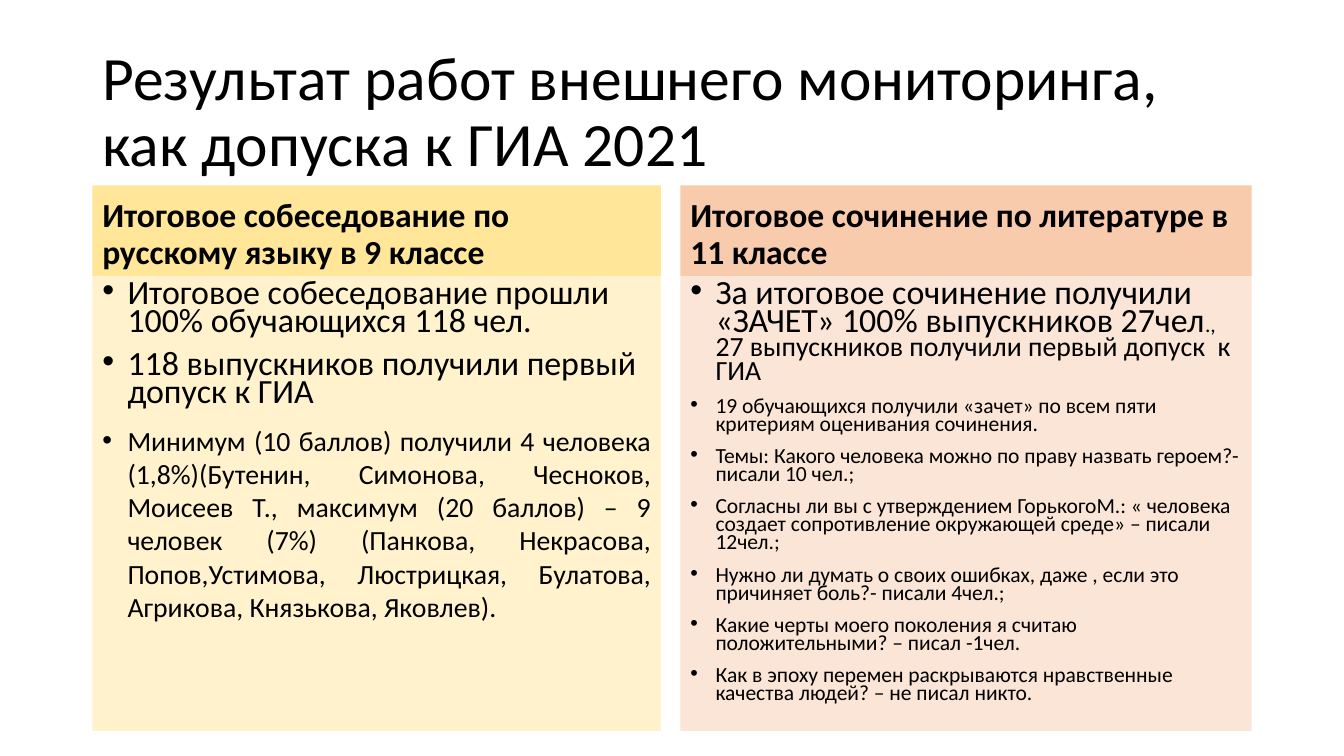
"""Build the slide on external monitoring results as admission to the 2021 state exam."""
import pptx
import pptx.util
import pptx.dml.color
import pptx.enum.shapes
import pptx.enum.text
import lxml.etree

Pt = pptx.util.Pt
RGBColor = pptx.dml.color.RGBColor
ALIGN = pptx.enum.text.PP_ALIGN
ANCHOR = pptx.enum.text.MSO_ANCHOR

BLACK = RGBColor(0x00, 0x00, 0x00)
WHITE = RGBColor(0xFF, 0xFF, 0xFF)
GOLD = RGBColor(0xFF, 0xE6, 0x99)
PALE_GOLD = RGBColor(0xFF, 0xF2, 0xCC)
ORANGE = RGBColor(0xF8, 0xCB, 0xAD)
PALE_ORANGE = RGBColor(0xFB, 0xE5, 0xD6)

LARGE, MEDIUM, SMALL = 24.2, 19.8, 15.4
LEFT = 66
HEADING_TOP, HEADING_HEIGHT = 132.4, 65
BODY_TOP, BODY_HEIGHT = 197.4, 324.6

interview_points = [
    ([("Итоговое собеседование прошли 100% обучающихся 118 чел.", LARGE)], ALIGN.LEFT, 0.7),
    ([("118 выпускников получили первый допуск к ГИА", LARGE)], ALIGN.LEFT, 0.7),
    ([("Минимум (10 баллов) получили 4 человека (1,8%)(Бутенин, Симонова, Чесноков, "
       "Моисеев Т., максимум (20 баллов) – 9 человек (7%) (Панкова, Некрасова, "
       "Попов,Устимова, Люстрицкая, Булатова, Агрикова, Князькова, Яковлев).", MEDIUM)],
     ALIGN.JUSTIFY, 1.0),
]

essay_details = [
    "19 обучающихся получили «зачет» по всем пяти критериям оценивания сочинения.",
    "Темы: Какого человека можно по праву назвать героем?- писали 10 чел.;",
    "Согласны ли вы с утверждением ГорькогоМ.: « человека создает сопротивление "
    "окружающей среде» – писали 12чел.;",
    "Нужно ли думать о своих ошибках, даже , если это причиняет боль?- писали 4чел.;",
    "Какие черты моего поколения я считаю положительными? – писал -1чел.",
    "Как в эпоху перемен раскрываются нравственные качества людей? – не писал никто.",
]
essay_points = [
    ([("За итоговое сочинение получили «ЗАЧЕТ» 100% выпускников 27чел", LARGE),
      ("., ", SMALL),
      ("27 выпускников получили первый допуск  к ГИА", MEDIUM)], ALIGN.LEFT, 0.7),
] + [([(detail, SMALL)], ALIGN.LEFT, 0.7) for detail in essay_details]

columns = [
    (LEFT, 406, GOLD, PALE_GOLD,
     "Итоговое собеседование по русскому языку в 9 классе", interview_points),
    (486, 408, ORANGE, PALE_ORANGE,
     "Итоговое сочинение по литературе в 11 классе", essay_points),
]

deck = pptx.Presentation()
deck.slide_width = Pt(960)
deck.slide_height = Pt(540)
page = deck.slides.add_slide(deck.slide_layouts[6])


def add_panel(left, top, width, height, color, anchor):
    """Add a filled rectangle and return its text frame."""
    box = page.shapes.add_shape(pptx.enum.shapes.MSO_SHAPE.RECTANGLE,
                                Pt(left), Pt(top), Pt(width), Pt(height))
    box.shadow.inherit = False
    box.fill.solid()
    box.fill.fore_color.rgb = color
    box.line.fill.background()
    box.text_frame.word_wrap = True
    box.text_frame.vertical_anchor = anchor
    return box.text_frame


def style_paragraph(para, size, align, spacing, before, bold=False):
    """Set the font, alignment and spacing of a paragraph."""
    para.font.name = "Calibri"
    para.font.size = Pt(size)
    para.font.bold = bold
    para.font.color.rgb = BLACK
    para.alignment = align
    para.line_spacing = spacing
    para.space_before = Pt(before)


title = add_panel(LEFT, 28.8, 828, 104.4, WHITE, ANCHOR.MIDDLE).paragraphs[0]
title.text = "Результат работ внешнего мониторинга, как допуска к ГИА 2021"
style_paragraph(title, 44, ALIGN.LEFT, 0.9, 0)

for left, width, heading_color, body_color, heading_text, points in columns:
    heading = add_panel(left, HEADING_TOP, width, HEADING_HEIGHT,
                        heading_color, ANCHOR.BOTTOM).paragraphs[0]
    heading.text = heading_text
    style_paragraph(heading, 24, ALIGN.LEFT, 0.9, 10, bold=True)

    body = add_panel(left, BODY_TOP, width, BODY_HEIGHT, body_color, ANCHOR.TOP)
    for index, (spans, align, spacing) in enumerate(points):
        para = body.add_paragraph() if index else body.paragraphs[0]
        base_size = spans[0][1]
        style_paragraph(para, base_size, align, spacing, 10)
        for text, size in spans:
            span = para.add_run()
            span.text = text
            if size != base_size:
                span.font.size = Pt(size)
        properties = para._p.get_or_add_pPr()
        properties.set("marL", str(Pt(18)))
        properties.set("indent", str(Pt(-18)))
        bullet_font = lxml.etree.Element(pptx.oxml.ns.qn("a:buFont"), typeface="Arial")
        bullet = lxml.etree.Element(pptx.oxml.ns.qn("a:buChar"), char="•")
        defaults = properties.find(pptx.oxml.ns.qn("a:defRPr"))
        defaults.addprevious(bullet_font)
        defaults.addprevious(bullet)

deck.save("out.pptx")
